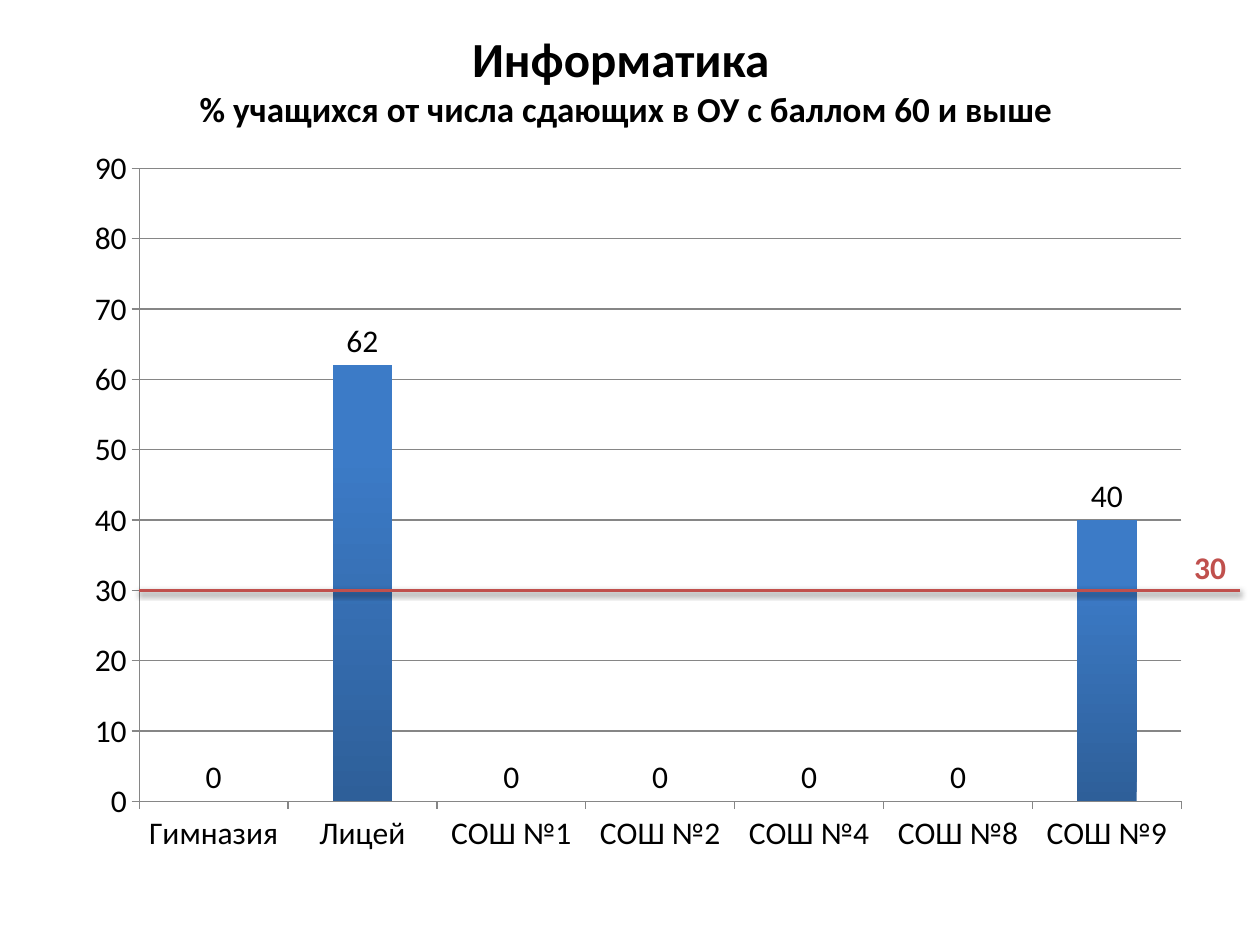
import pptx
import pptx.util
import pptx.oxml
import pptx.oxml.ns
import pptx.chart.data
import pptx.dml.color
import pptx.enum.chart
import pptx.enum.shapes
import pptx.enum.text

RGB = pptx.dml.color.RGBColor
BLACK = RGB(0x00, 0x00, 0x00)
RED = RGB(0xC0, 0x50, 0x4D)
GREY = RGB(0x86, 0x86, 0x86)
DARK = RGB(0x2E, 0x5F, 0x99)
BLUE = RGB(0x3C, 0x7B, 0xC7)
FONT = "Calibri"
WIDE, HIGH = pptx.util.Inches(10), pptx.util.Inches(7.5)
NS = pptx.oxml.ns.nsdecls("a", "c")

SCHOOLS = ["Гимназия", "Лицей", "СОШ №1", "СОШ №2", "СОШ №4", "СОШ №8", "СОШ №9"]
SCORES = [0, 62, 0, 0, 0, 0, 40]
TOP, STEP, GOAL = 90, 10, 30
CHART = (0.047, 0.156, 0.906, 0.792)
PLOT = (0.07, 0.028, 0.913, 0.846)


def scale(box):
    x, y, w, h = box
    return int(x * WIDE), int(y * HIGH), int(w * WIDE), int(h * HIGH)


def style(font, size, color=BLACK, bold=False):
    font.name = FONT
    font.size = pptx.util.Pt(size)
    font.bold = bold
    font.color.rgb = color


def write(par, text, size, color=BLACK):
    run = par.add_run()
    run.text = text
    style(run.font, size, color, True)


def add_head(slide, box):
    frame = slide.shapes.add_textbox(*scale(box)).text_frame
    frame.word_wrap = True
    frame.vertical_anchor = pptx.enum.text.MSO_ANCHOR.MIDDLE
    par = frame.paragraphs[0]
    par.alignment = pptx.enum.text.PP_ALIGN.CENTER
    write(par, "Информатика ", 28)
    par.add_line_break()
    write(par, "% учащихся от числа сдающих в ОУ с баллом 60 и выше", 20)


def set_plot(chart):
    parts = "".join(
        f'<c:{key} val="{val}"/>' for key, val in zip("xywh", PLOT)
    )
    layout = pptx.oxml.parse_xml(
        f'<c:layout {NS}><c:manualLayout><c:layoutTarget val="inner"/>'
        f'<c:xMode val="edge"/><c:yMode val="edge"/>{parts}'
        "</c:manualLayout></c:layout>"
    )
    area = chart._chartSpace.chart.plotArea
    for old in area.findall(pptx.oxml.ns.qn("c:layout")):
        area.remove(old)
    area.insert(0, layout)


def set_axes(chart):
    for axis in (chart.category_axis, chart.value_axis):
        axis.major_tick_mark = pptx.enum.chart.XL_TICK_MARK.OUTSIDE
        axis.format.line.color.rgb = GREY
        axis.format.line.width = pptx.util.Pt(0.75)
    axis = chart.value_axis
    axis.minimum_scale, axis.maximum_scale = 0, TOP
    axis.major_unit = STEP
    axis.has_major_gridlines = True
    axis.major_gridlines.format.line.color.rgb = GREY
    axis.major_gridlines.format.line.width = pptx.util.Pt(0.75)


def set_bars(chart):
    plot = chart.plots[0]
    plot.gap_width = 150
    plot.vary_by_categories = False
    fill = plot.series[0].format.fill
    fill.gradient()
    fill.gradient_angle = 90
    for stop, color, place in zip(fill.gradient_stops, (DARK, BLUE), (0, 0.8)):
        stop.color.rgb = color
        stop.position = place
    plot.has_data_labels = True
    labels = plot.data_labels
    labels.show_value = True
    labels.position = pptx.enum.chart.XL_LABEL_POSITION.OUTSIDE_END
    style(labels.font, 18)


def add_graph(slide, box):
    data = pptx.chart.data.CategoryChartData()
    data.categories = SCHOOLS
    data.add_series("Series 1", SCORES)
    kind = pptx.enum.chart.XL_CHART_TYPE.COLUMN_CLUSTERED
    chart = slide.shapes.add_chart(kind, *scale(box), data).chart
    chart.has_legend = False
    chart.has_title = False
    style(chart.font, 18)
    set_plot(chart)
    set_axes(chart)
    set_bars(chart)


def add_goal(slide, box):
    left, top, width, height = box
    x = left + PLOT[0] * width
    y = top + height * (PLOT[1] + PLOT[3] * (1 - GOAL / TOP))
    start, level, end, _ = scale((x, y, 0.984, 0))
    line = slide.shapes.add_connector(
        pptx.enum.shapes.MSO_CONNECTOR.STRAIGHT, start, level, end, level
    )
    line.line.color.rgb = RED
    line.line.width = pptx.util.Pt(2)
    line._element.spPr.append(pptx.oxml.parse_xml(
        f'<a:effectLst {NS}><a:outerShdw blurRad="40000" dist="20000" '
        'dir="5400000" rotWithShape="0"><a:srgbClr val="000000">'
        '<a:alpha val="38000"/></a:srgbClr></a:outerShdw></a:effectLst>'
    ))
    note = slide.shapes.add_textbox(*scale((0.938, y - 0.052, 0.07, 0.053)))
    note.text_frame.word_wrap = True
    write(note.text_frame.paragraphs[0], str(GOAL), 18, RED)


def main():
    deck = pptx.Presentation()
    deck.slide_width, deck.slide_height = WIDE, HIGH
    slide = deck.slides.add_slide(deck.slide_layouts[6])
    add_head(slide, (0.047, 0, 0.9, 0.167))
    add_graph(slide, CHART)
    add_goal(slide, CHART)
    deck.save("out.pptx")


if __name__ == "__main__":
    main()
